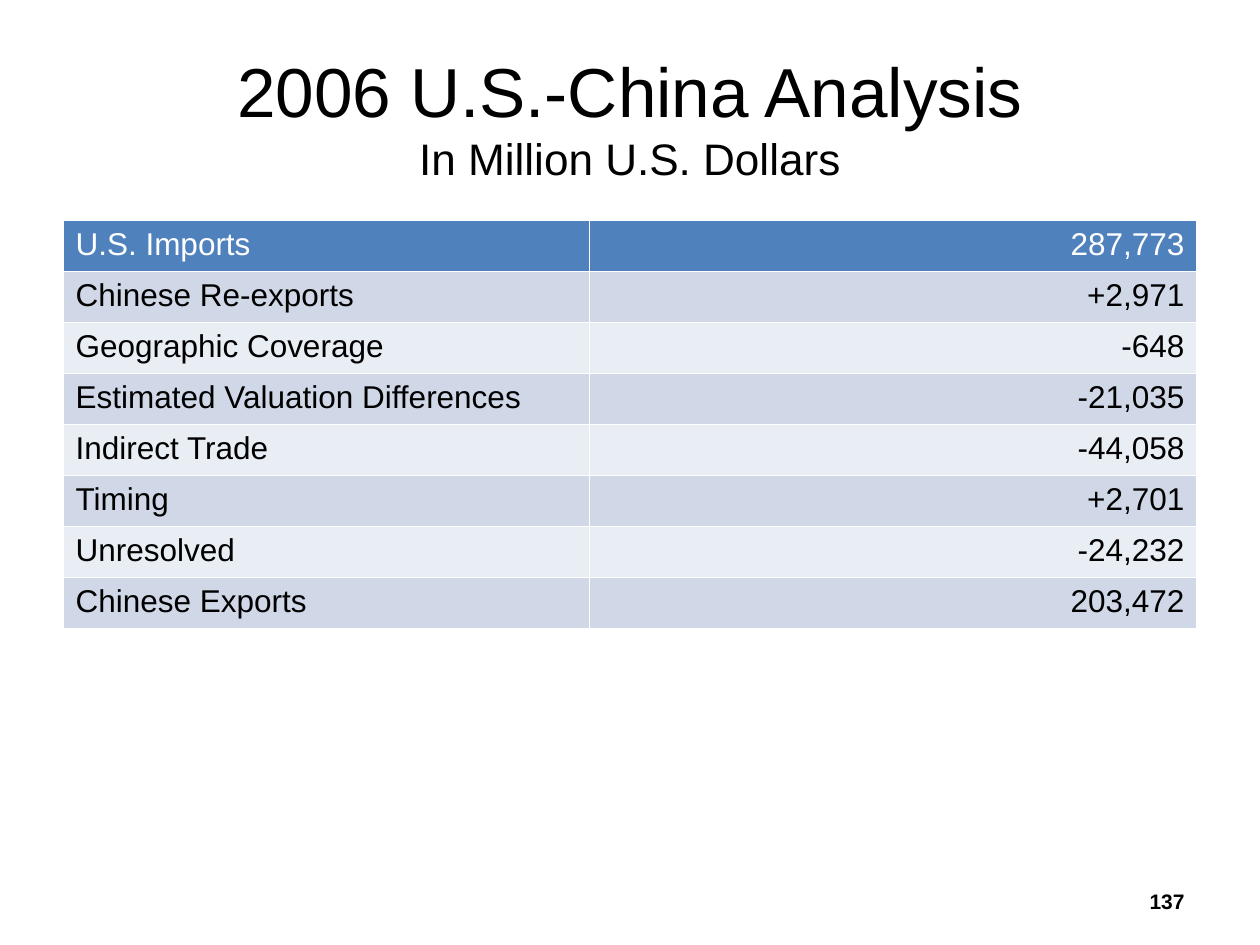
from lxml.etree import SubElement
from pptx import Presentation
from pptx.dml.color import RGBColor
from pptx.enum.text import MSO_ANCHOR as Anchor, MSO_AUTO_SIZE as AutoSize, PP_ALIGN as Align
from pptx.oxml.ns import qn
from pptx.util import Inches, Pt

ROWS = [
    ("U.S. Imports", "287,773"),
    ("Chinese Re-exports", "+2,971"),
    ("Geographic Coverage", "-648"),
    ("Estimated Valuation Differences", "-21,035"),
    ("Indirect Trade", "-44,058"),
    ("Timing", "+2,701"),
    ("Unresolved", "-24,232"),
    ("Chinese Exports", "203,472"),
]


def color(code):
    return RGBColor.from_string(code)


class SlideBuilder:
    font = "Arial"
    ink = "000000"
    paper = "FFFFFF"
    header = "4F81BD"
    bands = ("D0D8E8", "E9EDF4")

    def __init__(self, page):
        self.page = page

    def span(self, para, text, size, code=ink, bold=False):
        span = para.add_run()
        span.text = text
        span.font.name = self.font
        span.font.size = Pt(size)
        span.font.bold = bold
        span.font.color.rgb = color(code)

    def title(self, heading, subtitle, left, top, width, height):
        box = self.page.shapes.title
        box.left, box.top, box.width, box.height = map(Inches, (left, top, width, height))
        frame = box.text_frame
        frame.auto_size = AutoSize.NONE
        frame.vertical_anchor = Anchor.MIDDLE
        para = frame.paragraphs[0]
        para.alignment = Align.CENTER
        self.span(para, heading, 39.6)
        para.add_line_break()
        self.span(para, subtitle, 25.2)

    def borders(self, cell):
        props = cell._tc.get_or_add_tcPr()
        for side in ("lnL", "lnR", "lnT", "lnB"):
            line = SubElement(props, qn(f"a:{side}"), w=str(Pt(1)))
            fill = SubElement(line, qn("a:solidFill"))
            SubElement(fill, qn("a:srgbClr"), val=self.paper)

    def table(self, rows, left, top, widths, height):
        frame = self.page.shapes.add_table(
            len(rows), len(widths), Inches(left), Inches(top),
            Inches(sum(widths)), Inches(height))
        table = frame.table
        for column, width in zip(table.columns, widths):
            column.width = Inches(width)
        for r, values in enumerate(rows):
            fill = self.bands[(r - 1) % 2] if r else self.header
            for c, value in enumerate(values):
                cell = table.cell(r, c)
                self.borders(cell)
                cell.fill.solid()
                cell.fill.fore_color.rgb = color(fill)
                para = cell.text_frame.paragraphs[0]
                para.alignment = Align.RIGHT if c else Align.LEFT
                self.span(para, value, 18, self.ink if r else self.paper)

    def page_number(self, text, left, top, width, height):
        box = self.page.shapes.add_textbox(*map(Inches, (left, top, width, height)))
        frame = box.text_frame
        frame.word_wrap = True
        frame.vertical_anchor = Anchor.MIDDLE
        para = frame.paragraphs[0]
        para.alignment = Align.RIGHT
        self.span(para, text, 12, bold=True)


def main():
    deck = Presentation()
    deck.slide_width, deck.slide_height = Inches(10), Inches(7.5)
    # The "Title Only" layout
    builder = SlideBuilder(deck.slides.add_slide(deck.slide_layouts[5]))

    # Heading
    builder.title("2006 U.S.-China Analysis", "In Million U.S. Dollars", 0.5, 0.3, 9, 1.25)
    # Reconciliation from imports to exports
    builder.table(ROWS, 0.5, 1.75, (4.18, 4.82), 3.24)
    # Footer
    builder.page_number("137", 7.17, 6.95, 2.33, 0.4)

    deck.save("out.pptx")


if __name__ == "__main__":
    main()
